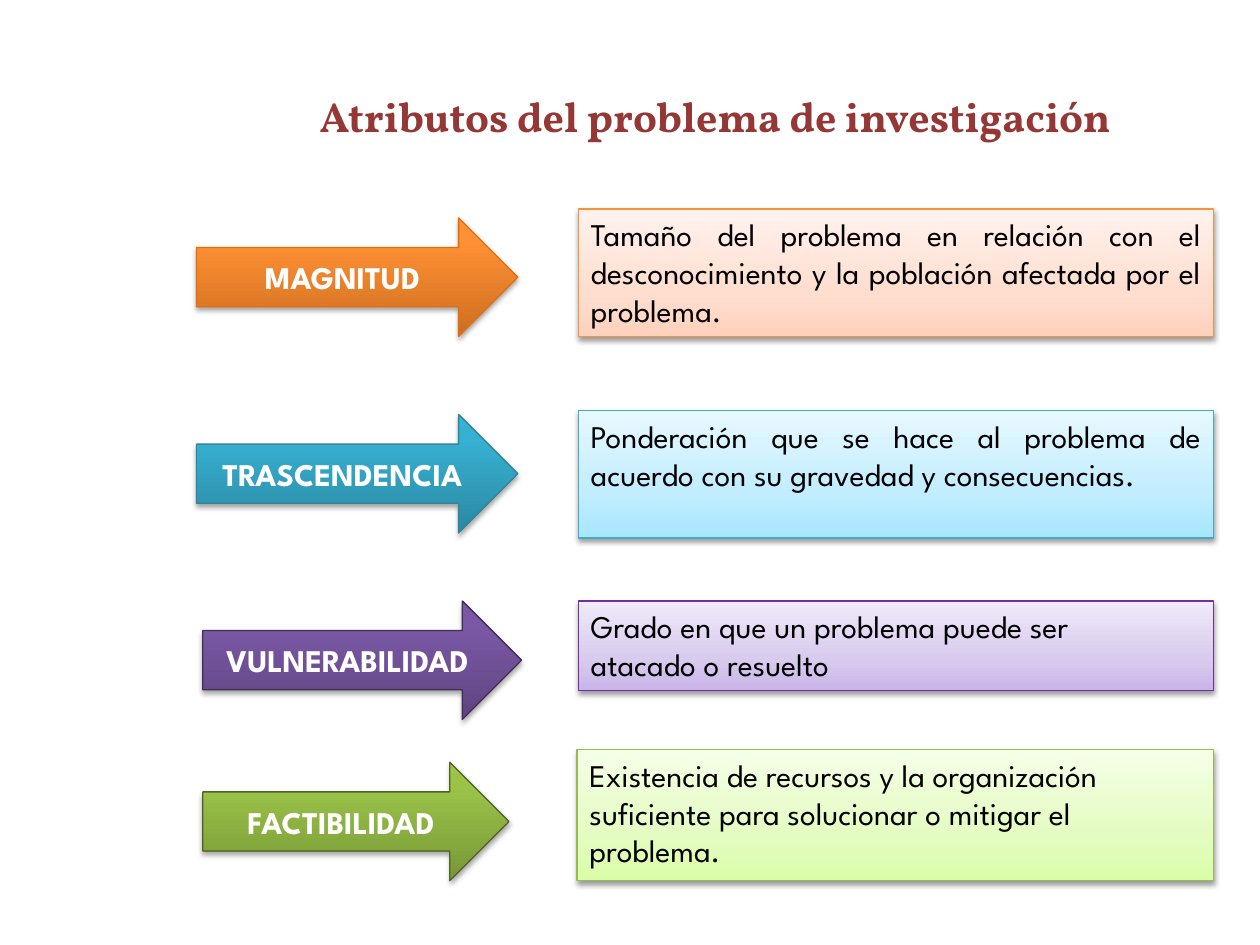
from lxml.etree import SubElement
from pptx import Presentation
from pptx.dml.color import RGBColor
from pptx.enum.shapes import MSO_SHAPE
from pptx.enum.text import MSO_ANCHOR, MSO_AUTO_SIZE, PP_ALIGN
from pptx.oxml.ns import qn
from pptx.util import Inches, Pt

BLACK = RGBColor(0x00, 0x00, 0x00)
WHITE = RGBColor(0xFF, 0xFF, 0xFF)
MAROON = RGBColor(0x95, 0x37, 0x35)
ORANGE = RGBColor(0xF6, 0x92, 0x40)
TEAL = RGBColor(0x46, 0xAA, 0xC5)
PURPLE = RGBColor(0x70, 0x30, 0xA0)
GREEN = RGBColor(0x98, 0xB9, 0x55)
DARK_ORANGE = RGBColor(0xE4, 0x6C, 0x0A)
DARK_TEAL = RGBColor(0x31, 0x85, 0x9C)
DARK_PURPLE = RGBColor(0x40, 0x31, 0x52)
DARK_GREEN = RGBColor(0x4F, 0x62, 0x28)
ORANGE_TINTS = [RGBColor(0xFF, 0xD2, 0xBD), RGBColor(0xFF, 0xDE, 0xD0), RGBColor(0xFF, 0xF2, 0xED)]
TEAL_TINTS = [RGBColor(0xA7, 0xE6, 0xFF), RGBColor(0xC1, 0xED, 0xFF), RGBColor(0xE7, 0xF8, 0xFF)]
PURPLE_TINTS = [RGBColor(0xC9, 0xB5, 0xE8), RGBColor(0xD8, 0xCB, 0xEE), RGBColor(0xF0, 0xEA, 0xF9)]
GREEN_TINTS = [RGBColor(0xDA, 0xFD, 0xA7), RGBColor(0xE4, 0xFC, 0xC2), RGBColor(0xF5, 0xFF, 0xE7)]
ORANGE_SHADES = [RGBColor(0xCC, 0x6E, 0x20), RGBColor(0xFF, 0x90, 0x34), RGBColor(0xFF, 0x91, 0x36)]
TEAL_SHADES = [RGBColor(0x2A, 0x88, 0xA2), RGBColor(0x37, 0xB1, 0xD2), RGBColor(0x34, 0xB4, 0xD6)]
PURPLE_SHADES = [RGBColor(0x5F, 0x44, 0x80), RGBColor(0x7B, 0x58, 0xA6), RGBColor(0x7C, 0x57, 0xA8)]
GREEN_SHADES = [RGBColor(0x77, 0x97, 0x37), RGBColor(0x9B, 0xC3, 0x48), RGBColor(0x9D, 0xC7, 0x46)]

BOX = {"kind": MSO_SHAPE.RECTANGLE, "middle": 35, "alpha": 38, "dist": 1.6,
       "frame": {"vertical_anchor": MSO_ANCHOR.TOP, "auto_size": MSO_AUTO_SIZE.SHAPE_TO_FIT_TEXT},
       "align": PP_ALIGN.JUSTIFY, "color": BLACK,
       "font": {"name": "League Spartan", "size": Pt(18), "bold": False}}
ARROW = {"kind": MSO_SHAPE.RIGHT_ARROW, "middle": 80, "alpha": 35, "dist": 1.8,
         "frame": {"vertical_anchor": MSO_ANCHOR.MIDDLE},
         "align": PP_ALIGN.CENTER, "color": WHITE,
         "font": {"name": "League Spartan", "size": Pt(18), "bold": True}}
TITLE = {"frame": {"vertical_anchor": MSO_ANCHOR.MIDDLE},
         "align": PP_ALIGN.CENTER, "color": MAROON,
         "font": {"name": "Vollkorn", "size": Pt(24), "bold": True}}


def write_text(sp, text, style):
    tf = sp.text_frame
    tf.text = text
    tf.word_wrap = True
    for key, value in style["frame"].items():
        setattr(tf, key, value)
    for p in tf.paragraphs:
        p.alignment = style["align"]
        for r in p.runs:
            r.font.color.rgb = style["color"]
            for key, value in style["font"].items():
                setattr(r.font, key, value)


def add_panel(s, bounds, text, line, colors, style):
    sp = s.shapes.add_shape(style["kind"], *[Inches(v) for v in bounds])
    sp.fill.gradient()
    sp.fill.gradient_angle = 90
    stops = sp.element.spPr.find(qn("a:gradFill")).find(qn("a:gsLst"))
    for stop in list(stops):
        stops.remove(stop)
    for pos, color in zip((0, style["middle"], 100), colors):
        stop = SubElement(stops, qn("a:gs"), pos=str(pos * 1000))
        SubElement(stop, qn("a:srgbClr"), val=str(color))
    sp.line.color.rgb = line
    sp.line.width = Pt(0.75)
    sp.shadow.inherit = False
    shadow = SubElement(sp.element.spPr.find(qn("a:effectLst")), qn("a:outerShdw"),
                        blurRad=str(Pt(3.1)), dist=str(Pt(style["dist"])),
                        dir="5400000", rotWithShape="0")
    black = SubElement(shadow, qn("a:srgbClr"), val=str(BLACK))
    SubElement(black, qn("a:alpha"), val=str(style["alpha"] * 1000))
    write_text(sp, text, style)


prs = Presentation()
prs.slide_width, prs.slide_height = Inches(10), Inches(7.5)
s = prs.slides.add_slide(prs.slide_layouts[5])

title = s.shapes.title
title.left, title.top, title.width, title.height = [Inches(v) for v in (1.85, 0.29, 7.65, 1.25)]
write_text(title, "Atributos del problema de investigación", TITLE)

definitions = [
    ((4.59, 1.66, 5.04, 1.01),
     "Tamaño del problema en relación con el desconocimiento y la población afectada por el problema.",
     ORANGE, ORANGE_TINTS),
    ((4.59, 3.26, 5.04, 1.01),
     "Ponderación que se hace al problema de acuerdo con su gravedad y consecuencias.",
     TEAL, TEAL_TINTS),
    ((4.59, 4.77, 5.04, 0.71),
     "Grado en que un problema puede ser\natacado o resuelto",
     PURPLE, PURPLE_TINTS),
    ((4.58, 5.95, 5.05, 1.04),
     "Existencia de recursos y la organización\nsuficiente para solucionar o mitigar el\nproblema.",
     GREEN, GREEN_TINTS),
]
attributes = [
    ((1.56, 1.73, 2.55, 0.94), "MAGNITUD", DARK_ORANGE, ORANGE_SHADES),
    ((1.56, 3.29, 2.55, 0.94), "TRASCENDENCIA", DARK_TEAL, TEAL_SHADES),
    ((1.61, 4.77, 2.53, 0.94), "VULNERABILIDAD", DARK_PURPLE, PURPLE_SHADES),
    ((1.61, 6.05, 2.43, 0.94), "FACTIBILIDAD", DARK_GREEN, GREEN_SHADES),
]
for panels, style in ((definitions, BOX), (attributes, ARROW)):
    for bounds, text, line, colors in panels:
        add_panel(s, bounds, text, line, colors, style)

prs.save("out.pptx")
